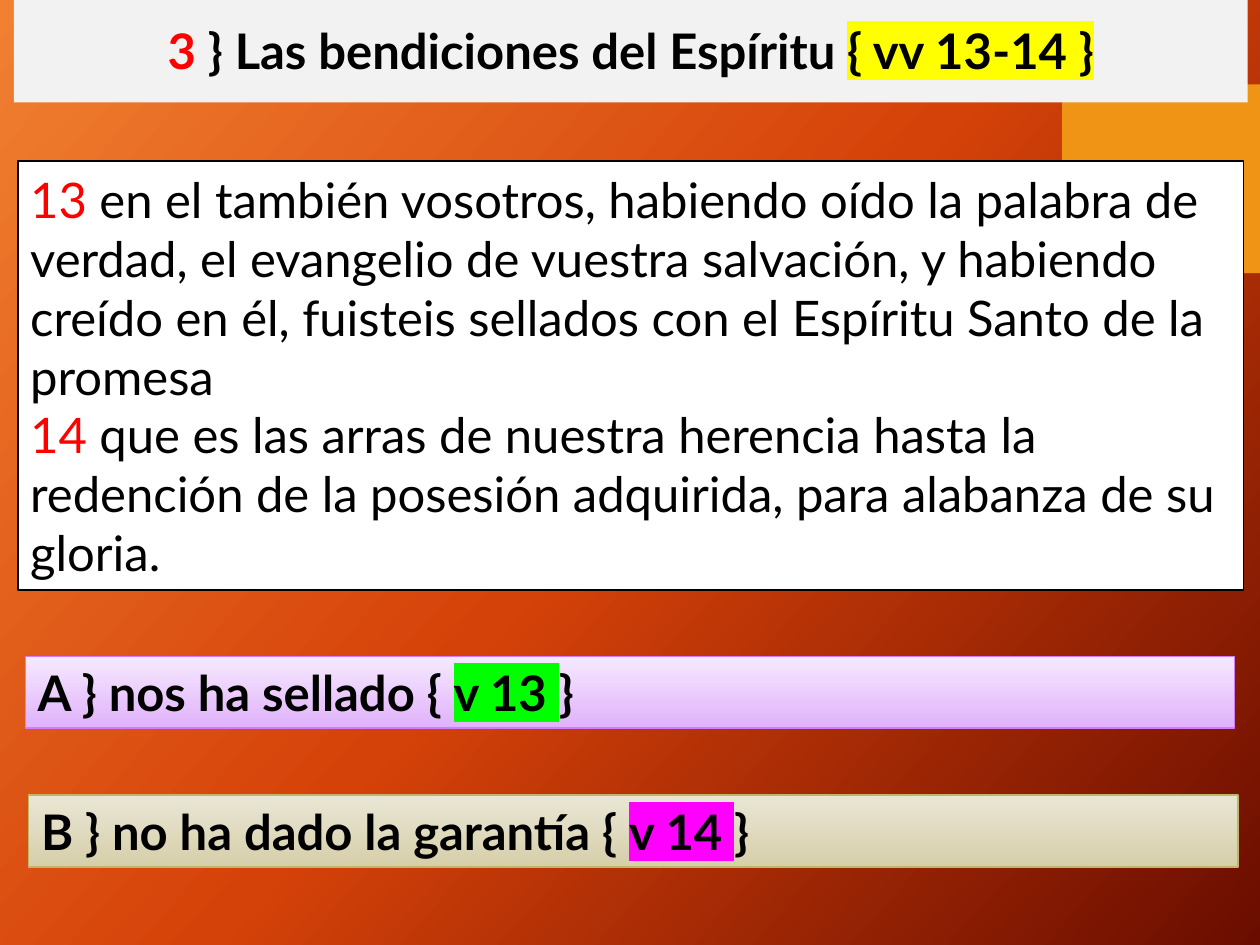
from lxml import etree
from pptx import Presentation
from pptx.dml.color import RGBColor
from pptx.enum.shapes import MSO_SHAPE
from pptx.enum.text import MSO_ANCHOR, MSO_AUTO_SIZE, PP_ALIGN
from pptx.oxml.ns import qn
from pptx.util import Cm, Pt

RECTANGLE = MSO_SHAPE.RECTANGLE
LEFT, CENTER = PP_ALIGN.LEFT, PP_ALIGN.CENTER
MIDDLE = MSO_ANCHOR.MIDDLE
GROW = MSO_AUTO_SIZE.SHAPE_TO_FIT_TEXT

FONT = "Lato"
SIZE = Pt(28)
COLORS = {
    "black": "000000", "white": "FFFFFF", "red": "FF0000",
    "yellow": "FFFF00", "green": "00FF00", "magenta": "FF00FF",
    "title": "F2F2F2", "accent": "F09415",
    "flame": "F18031", "ember": "D54209", "maroon": "6A0D00",
    "lilac": "F6E9FE", "violet": "E0B2FB", "violet_line": "D17DF9",
    "sand": "EAE6D5", "khaki": "D6CFAA", "khaki_line": "C1B56B",
}


def rgb(name):
    return RGBColor.from_string(COLORS[name])


def set_gradient(fill, element, names, angle):
    """Spread the named colours evenly along a clockwise angle."""
    fill.gradient()
    fill.gradient_angle = 360 - angle
    stops = next(element.iter(qn("a:gsLst")))
    for stop in list(stops):
        stops.remove(stop)
    for index, name in enumerate(names):
        position = 100000 * index // (len(names) - 1)
        stop = etree.SubElement(stops, qn("a:gs"), pos=str(position))
        etree.SubElement(stop, qn("a:srgbClr"), val=COLORS[name])


def add_box(page, place, fills, line=None, width=1):
    left, top, wide, high = map(Cm, place)
    box = page.shapes.add_shape(RECTANGLE, left, top, wide, high)
    box.shadow.inherit = False
    if len(fills) > 1:
        set_gradient(box.fill, box.element, fills, 90)
    else:
        box.fill.solid()
        box.fill.fore_color.rgb = rgb(fills[0])
    if line:
        box.line.color.rgb = rgb(line)
        box.line.width = Pt(width)
    else:
        box.line.fill.background()
    return box


def add_span(para, text, color="black", bold=False, mark=None):
    span = para.add_run()
    span.text = text
    span.font.size = SIZE
    span.font.bold = bold
    span.font.color.rgb = rgb(color)
    if mark:
        highlight = etree.Element(qn("a:highlight"))
        etree.SubElement(highlight, qn("a:srgbClr"), val=COLORS[mark])
        span.font.fill  # the highlight follows the fill of the run
        span.font._element.find(qn("a:solidFill")).addnext(highlight)
    span.font.name = FONT


def write(box, paragraphs, align=LEFT):
    frame = box.text_frame
    frame.word_wrap = True
    frame.auto_size = GROW
    frame.vertical_anchor = MIDDLE
    for index, spans in enumerate(paragraphs):
        para = frame.add_paragraph() if index else frame.paragraphs[0]
        para.alignment = align
        for span in spans:
            add_span(para, *span)


def add_title(page):
    title = page.shapes.title
    title.left, title.top = Cm(0.28), Cm(0.28)
    title.width, title.height = Cm(24.87), Cm(1.45)
    title.fill.solid()
    title.fill.fore_color.rgb = rgb("title")
    write(title, [[
        ("3 ", "red", True),
        ("} Las bendiciones del Espíritu ", "black", True),
        ("{ vv 13-14 }", "black", True, "yellow"),
    ]], CENTER)


def add_point(page, left, top, fills, line, text, verse, mark):
    box = add_box(page, (left, top, 24.38, 1.45), fills, line, 0.75)
    write(box, [[
        (text, "black", True),
        (verse, "black", True, mark),
        ("}", "black", True),
    ]])


def main():
    deck = Presentation()
    deck.slide_width, deck.slide_height = Cm(25.4), Cm(19.05)
    page = deck.slides.add_slide(deck.slide_layouts[5])

    # Background and the accent block behind everything
    set_gradient(page.background.fill, page.element,
                 ("flame", "ember", "maroon"), 42)
    accent = add_box(page, (21.41, 1.7, 3.99, 3.81), ["accent"])
    page.shapes.title.element.addprevious(accent.element)

    add_title(page)

    # Bible passage
    passage = add_box(page, (0.36, 3.25, 24.71, 8.64), ["white"], "black")
    write(passage, [
        [("13", "red"),
         (" en el también vosotros, habiendo oído la palabra de verdad, "
          "el evangelio de vuestra salvación, y habiendo creído en él, "
          "fuisteis sellados con el Espíritu Santo de la promesa",)],
        [("14", "red"),
         (" que es las arras de nuestra herencia hasta la redención de la "
          "posesión adquirida, para alabanza de su gloria.",)],
    ])

    # The two points
    add_point(page, 0.51, 13.23, ("lilac", "violet"), "violet_line",
              "A } nos ha sellado { ", "v 13 ", "green")
    add_point(page, 0.58, 16.03, ("sand", "khaki"), "khaki_line",
              "B } no ha dado la garantía { ", "v 14 ", "magenta")

    deck.save("out.pptx")


if __name__ == "__main__":
    main()
